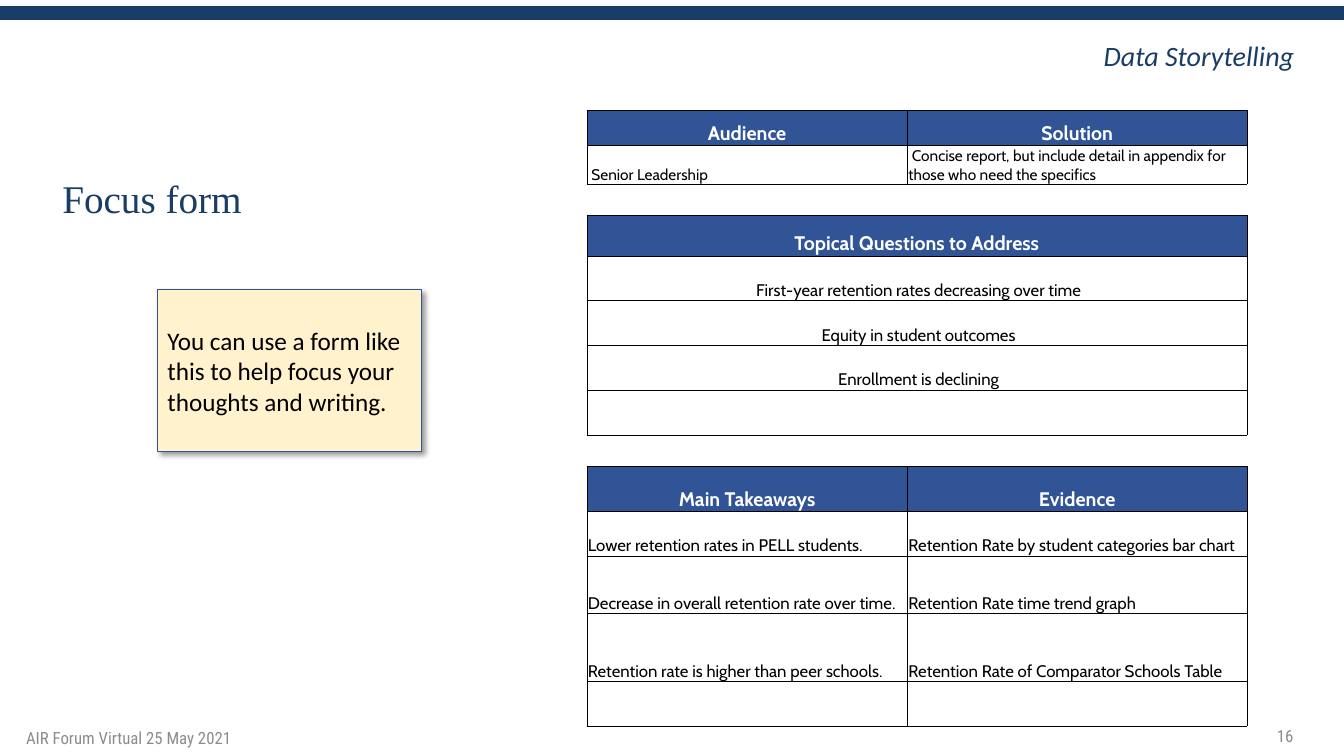
from lxml import etree
from pptx import Presentation
from pptx.dml.color import RGBColor
from pptx.enum.shapes import MSO_CONNECTOR, MSO_SHAPE
from pptx.enum.text import MSO_ANCHOR, PP_ALIGN
from pptx.oxml.ns import qn
from pptx.util import Pt

LEFT, CENTER, RIGHT = PP_ALIGN.LEFT, PP_ALIGN.CENTER, PP_ALIGN.RIGHT
TOP, MIDDLE, BOTTOM = MSO_ANCHOR.TOP, MSO_ANCHOR.MIDDLE, MSO_ANCHOR.BOTTOM
STRAIGHT, RECTANGLE = MSO_CONNECTOR.STRAIGHT, MSO_SHAPE.RECTANGLE

NAVY, BLUE, GRAY = "193D66", "305496", "8C8C8C"
BLACK, WHITE, CREAM = "000000", "FFFFFF", "FFF2CC"
PAGE_WIDTH, PAGE_HEIGHT = 960, 540
COLUMN_WIDTHS = (229, 242.5)

# Row height, text size, texts; one text spans the table, no texts make a gap.
HEADER_SIZE = 14
FORM_ROWS = [
    (25, HEADER_SIZE, ["Audience", "Solution"]),
    (28, 11, [" Senior Leadership",
              " Concise report, but include detail in appendix for those who need the specifics"]),
    (22, 12, []),
    (29.2, HEADER_SIZE, ["Topical Questions to Address"]),
    (32, 12, [" First-year retention rates decreasing over time"]),
    (32, 12, [" Equity in student outcomes"]),
    (32, 12, [" Enrollment is declining"]),
    (32, 12, [""]),
    (22.6, 12, []),
    (32, HEADER_SIZE, ["Main Takeaways", "Evidence"]),
    (32, 12, ["Lower retention rates in PELL students.",
              "Retention Rate by student categories bar chart"]),
    (41, 12, ["Decrease in overall retention rate over time.",
              "Retention Rate time trend graph"]),
    (48.5, 12, ["Retention rate is higher than peer schools.",
                "Retention Rate of Comparator Schools Table"]),
    (32, 12, ["", ""]),
]


def rgb(color):
    return RGBColor.from_string(color)


def style_font(para, name, size, color, bold=False, italic=False):
    font = para.font
    font.name, font.size, font.bold, font.italic = name, Pt(size), bold, italic
    font.color.rgb = rgb(color)


def add_text(page, left, top, width, height, text, name, size, color,
             align=LEFT, anchor=MIDDLE, italic=False):
    box = page.shapes.add_textbox(Pt(left), Pt(top), Pt(width), Pt(height))
    frame = box.text_frame
    frame.word_wrap = True
    frame.vertical_anchor = anchor
    para = frame.paragraphs[0]
    para.text, para.alignment = text, align
    style_font(para, name, size, color, italic=italic)
    return para


def add_top_bar(page, y, weight):
    bar = page.shapes.add_connector(STRAIGHT, Pt(0), Pt(y), Pt(PAGE_WIDTH), Pt(y))
    bar.line.color.rgb = rgb(NAVY)
    bar.line.width = Pt(weight)
    etree.SubElement(bar._element.spPr, qn("a:effectLst"))


def add_shadow(shape, blur, distance, degrees, opacity):
    shape.shadow.inherit = False
    effects = shape._element.spPr.find(qn("a:effectLst"))
    shadow = etree.SubElement(effects, qn("a:outerShdw"), blurRad=str(Pt(blur)),
                              dist=str(Pt(distance)), dir=str(degrees * 60000),
                              algn="tl", rotWithShape="0")
    color = etree.SubElement(shadow, qn("a:srgbClr"), val=BLACK)
    etree.SubElement(color, qn("a:alpha"), val=str(opacity * 1000))


def add_note(page, left, top, width, height, text):
    note = page.shapes.add_shape(RECTANGLE, Pt(left), Pt(top), Pt(width), Pt(height))
    note.fill.solid()
    note.fill.fore_color.rgb = rgb(CREAM)
    note.line.color.rgb = rgb("2F5597")
    note.line.width = Pt(0.75)
    add_shadow(note, 4, 3, 45, 40)
    frame = note.text_frame
    frame.word_wrap = True
    frame.vertical_anchor = MIDDLE
    para = frame.paragraphs[0]
    para.text, para.alignment = text, LEFT
    style_font(para, "Calibri", 18, BLACK)


def set_borders(cell, sides):
    """Draw thin black borders on the given sides (of "LRTB") and none on the others."""
    properties = cell._tc.get_or_add_tcPr()
    for side in "LRTB":
        line = etree.SubElement(properties, qn(f"a:ln{side}"), w=str(Pt(0.5)))
        if side in sides:
            fill = etree.SubElement(line, qn("a:solidFill"))
            etree.SubElement(fill, qn("a:srgbClr"), val=BLACK)
        else:
            etree.SubElement(line, qn("a:noFill"))


def fill_cell(cell, text, size, align, is_header, sides):
    set_borders(cell, sides)
    if is_header:
        cell.fill.solid()
        cell.fill.fore_color.rgb = rgb(BLUE)
    else:
        cell.fill.background()
    cell.margin_left = cell.margin_right = cell.margin_top = Pt(0.75)
    cell.margin_bottom = Pt(0)
    cell.vertical_anchor = BOTTOM
    para = cell.text_frame.paragraphs[0]
    para.text, para.alignment = text, align
    style_font(para, "Cabin", size, WHITE if is_header else BLACK, bold=is_header)


def add_form(page, left, top):
    height = sum(row[0] for row in FORM_ROWS)
    frame = page.shapes.add_table(len(FORM_ROWS), len(COLUMN_WIDTHS), Pt(left), Pt(top),
                                  Pt(sum(COLUMN_WIDTHS)), Pt(height))
    form = frame.table
    form.first_row = form.horz_banding = False
    for column, width in zip(form.columns, COLUMN_WIDTHS):
        column.width = Pt(width)
    for index, (row_height, size, texts) in enumerate(FORM_ROWS):
        form.rows[index].height = Pt(row_height)
        is_header = size == HEADER_SIZE
        spans = len(texts) == 1
        align = CENTER if is_header or spans else LEFT
        sides = "LRTB" if texts else "TB"
        padded = texts + [""] * (len(COLUMN_WIDTHS) - len(texts))
        for column, text in enumerate(padded):
            fill_cell(form.cell(index, column), text, size, align, is_header, sides)
        if spans:
            form.cell(index, 0).merge(form.cell(index, 1))


def main():
    deck = Presentation()
    deck.slide_width, deck.slide_height = Pt(PAGE_WIDTH), Pt(PAGE_HEIGHT)
    page = deck.slides.add_slide(deck.slide_layouts[6])
    add_top_bar(page, 9.4, 10)
    add_text(page, 759.6, 23.8, 172, 31.5, "Data Storytelling", "Calibri", 20, NAVY,
             align=RIGHT, anchor=TOP, italic=True)
    title = add_text(page, 37.4, 113, 361.4, 60.5, "Focus form", "Times New Roman", 28, NAVY)
    title.line_spacing = 0.9
    add_text(page, 11.5, 519.8, 178, 14.4, "AIR Forum Virtual 25 May 2021",
             "Roboto Condensed", 12, GRAY)
    add_text(page, 715, 511.2, 216, 28.8, "16", "Roboto Condensed", 12, GRAY, align=RIGHT)
    add_form(page, 419.2, 78.6)
    add_note(page, 112.5, 206.9, 188.6, 116,
             "You can use a form like this to help focus your thoughts and writing.")
    deck.save("out.pptx")


if __name__ == "__main__":
    main()
